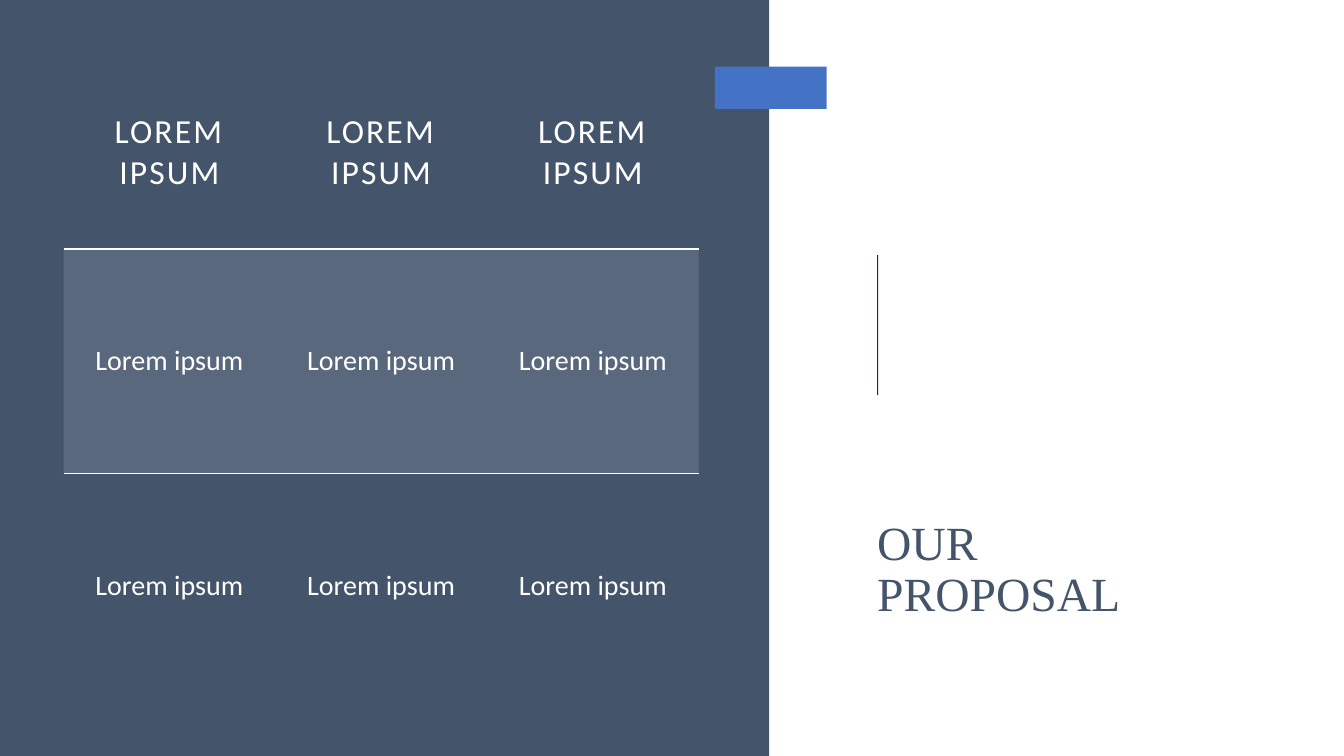
from copy import deepcopy

from pptx import Presentation
from pptx.dml.color import RGBColor
from pptx.enum.shapes import MSO_SHAPE
from pptx.enum.text import MSO_ANCHOR, PP_ALIGN
from pptx.oxml import parse_xml
from pptx.oxml.ns import nsdecls, qn
from pptx.util import Inches, Pt

COLORS = {"navy": "44546A", "blue": "4472C4", "dark": "24282B",
          "white": "FFFFFF", "band": "ADB9CA"}
NO_STYLE = "{2D5ABB26-0587-4C30-8999-92F81FD0307C}"


def write(tf, text, size, font, color, align=PP_ALIGN.LEFT, line=1.0, spacing=0):
    """Fill the first paragraph; spacing is letter spacing in points."""
    tf.word_wrap = True
    p = tf.paragraphs[0]
    p.text = text
    p.alignment = align
    p.line_spacing = line
    for r in p.runs:
        r.font.size = Pt(size)
        r.font.name = font
        r.font.color.rgb = RGBColor.from_string(COLORS[color])
        r._r.get_or_add_rPr().set("spc", str(int(spacing * 100)))
    for br in p._p.findall(qn("a:br")):
        br.insert(0, deepcopy(p.runs[0]._r.rPr))


prs = Presentation()
prs.slide_width, prs.slide_height = Inches(13.33), Inches(7.5)
s = prs.slides.add_slide(prs.slide_layouts[5])

# Panel, thin vertical rule and accent block
for color, x, y, w, h in [("navy", 0, 0, 7.63, 7.5),
                          ("dark", 8.7, 2.53, 0.01, 1.39),
                          ("blue", 7.09, 0.66, 1.11, 0.42)]:
    sp = s.shapes.add_shape(MSO_SHAPE.RECTANGLE, Inches(x), Inches(y), Inches(w), Inches(h))
    sp.shadow.inherit = False
    sp.fill.solid()
    sp.fill.fore_color.rgb = RGBColor.from_string(COLORS[color])
    sp.line.fill.background()

# Proposal table
rows = [["LOREM IPSUM"] * 3, ["Lorem ipsum"] * 3, ["Lorem ipsum"] * 3]
heights = [1.91, 2.23, 2.23]
table = s.shapes.add_table(3, 3, Inches(0.63), Inches(0.56), Inches(6.29), Inches(6.37)).table
table._tbl.tblPr.find(qn("a:tableStyleId")).text = NO_STYLE
table.horz_banding = False
for col in table.columns:
    col.width = Inches(2.1)
for i, (texts, height) in enumerate(zip(rows, heights)):
    table.rows[i].height = Inches(height)
    for j, text in enumerate(texts):
        cell = table.cell(i, j)
        cell.vertical_anchor = MSO_ANCHOR.MIDDLE
        cell.margin_left = cell.margin_right = Inches(0.25)
        cell.margin_top = cell.margin_bottom = Inches(0.25)
        write(cell.text_frame, text, 24 if i == 0 else 20, "Calibri", "white",
              align=PP_ALIGN.CENTER, spacing=1.5 if i == 0 else 0)
        tcPr = cell._tc.get_or_add_tcPr()
        if i == 1:
            cell.fill.solid()
            cell.fill.fore_color.rgb = RGBColor.from_string(COLORS["band"])
            tcPr.find(".//" + qn("a:srgbClr")).append(
                parse_xml(f'<a:alpha {nsdecls("a")} val="20000"/>'))
        else:
            cell.fill.background()
        for k, side in enumerate([["lnB"], ["lnT", "lnB"], []][i]):
            tcPr.insert(k, parse_xml(
                f'<a:{side} {nsdecls("a")} w="12700"><a:solidFill>'
                f'<a:srgbClr val="{COLORS["white"]}"/></a:solidFill></a:{side}>'))

title = s.shapes.title
title.left, title.top, title.width, title.height = map(Inches, (8.7, 4.41, 4, 1.76))
tf = title.text_frame
tf.margin_left = tf.margin_right = tf.margin_top = tf.margin_bottom = 0
tf.vertical_anchor = MSO_ANCHOR.BOTTOM
write(tf, "OUR \vPROPOSAL", 34, "Times New Roman", "navy", line=0.9)

prs.save("out.pptx")
